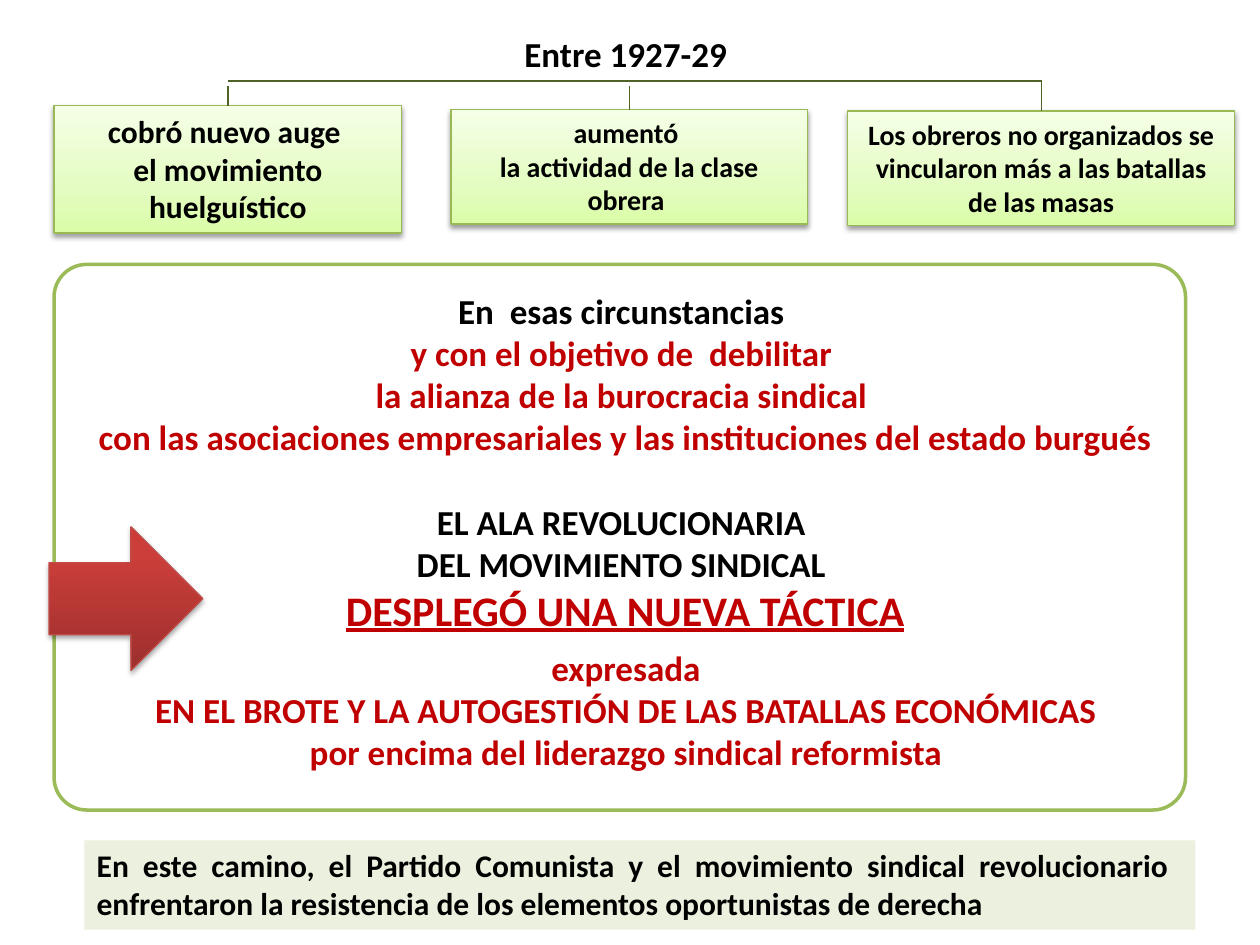
"""Builds the slide on the union movement between 1927 and 1929."""
from lxml.etree import SubElement
from pptx import Presentation
from pptx.dml.color import RGBColor
from pptx.enum.shapes import MSO_CONNECTOR, MSO_SHAPE
from pptx.enum.text import MSO_ANCHOR, MSO_AUTO_SIZE, PP_ALIGN
from pptx.oxml.ns import qn
from pptx.util import Cm, Pt

BLACK = RGBColor(0x00, 0x00, 0x00)
WHITE = RGBColor(0xFF, 0xFF, 0xFF)
RED = RGBColor(0xC0, 0x00, 0x00)
DARK_GREEN = RGBColor(0x4F, 0x62, 0x28)
PANEL_GREEN = RGBColor(0x9B, 0xBB, 0x59)
BOX_GREEN = RGBColor(0x98, 0xB9, 0x55)
PALE_GREEN = RGBColor(0xEB, 0xF1, 0xDE)
ARROW_RED = RGBColor(0xBF, 0x4C, 0x48)
GREEN_STOPS = [(0, RGBColor(0xDA, 0xFD, 0xA7)), (35, RGBColor(0xE4, 0xFC, 0xC2)),
               (100, RGBColor(0xF5, 0xFF, 0xE7))]
RED_STOPS = [(0, RGBColor(0x9C, 0x2F, 0x2D)), (80, RGBColor(0xCB, 0x3E, 0x3A)),
             (100, RGBColor(0xCE, 0x3B, 0x37))]

FACTS = [
    ((1.09, 2.13, 7.01, 2.57), 18, 1.73, ["cobró nuevo auge ", "el movimiento huelguístico"]),
    ((9.09, 2.21, 7.19, 2.31), 16, 1.73, ["aumentó ", "la actividad de la clase obrera "]),
    ((17.09, 2.24, 7.8, 2.31), 16, 1.63,
     ["Los obreros no organizados se vincularon más a las batallas de las masas"]),
]
CIRCUMSTANCES = ["En  esas circunstancias "]
PURPOSE = [
    "y con el objetivo de  debilitar ",
    "la alianza de la burocracia sindical ",
    "con las asociaciones empresariales y las instituciones del estado burgués",
]
WING = ["EL ALA REVOLUCIONARIA ", "DEL MOVIMIENTO SINDICAL "]
TACTIC = ["DESPLEGÓ UNA NUEVA TÁCTICA"]
EXPRESSION = [
    "expresada ",
    "EN EL BROTE Y LA AUTOGESTIÓN DE LAS BATALLAS ECONÓMICAS ",
    "por encima del liderazgo sindical reformista ",
]
CLOSING = ["En este camino, el Partido Comunista y el movimiento sindical revolucionario  "
           "enfrentaron la resistencia de los elementos oportunistas de derecha "]


def add_lines(owner, lines, size, color=BLACK, align=PP_ALIGN.CENTER, gap=0, underline=None):
    """Append bold paragraphs, with a gap in points before the first."""
    frame = owner.text_frame
    frame_format = {"word_wrap": True, "vertical_anchor": MSO_ANCHOR.TOP,
                    "auto_size": MSO_AUTO_SIZE.SHAPE_TO_FIT_TEXT}
    for name, value in frame_format.items():
        setattr(frame, name, value)
    font_format = {"name": "Calibri", "size": Pt(size), "bold": True, "underline": underline}
    for index, line in enumerate(lines):
        paragraph = frame.add_paragraph() if frame.text else frame.paragraphs[0]
        paragraph.alignment = align
        if gap and index == 0:
            paragraph.space_before = Pt(gap)
        run = paragraph.add_run()
        run.text = line
        for name, value in font_format.items():
            setattr(run.font, name, value)
        run.font.color.rgb = color


def add_text(slide, place):
    """Add an empty text box at a place in centimetres."""
    return slide.shapes.add_textbox(*map(Cm, place))


def add_panel(slide, kind, place, fill, line=None, width=0.75):
    """Add a shape with a plain fill, without shadow."""
    panel = slide.shapes.add_shape(kind, *map(Cm, place))
    panel.shadow.inherit = False
    panel.fill.solid()
    panel.fill.fore_color.rgb = fill
    if line is None:
        panel.line.fill.background()
    else:
        panel.line.color.rgb = line
        panel.line.width = Pt(width)
    return panel


def add_glossy(slide, kind, place, stops, line, opacity):
    """Add a shape with an upward gradient and a soft shadow below."""
    glossy = add_panel(slide, kind, place, WHITE, line)
    glossy.fill.gradient()
    glossy.fill.gradient_angle = 90
    properties = glossy.element.spPr
    stop_list = properties.find(qn("a:gradFill")).find(qn("a:gsLst"))
    for old_stop in list(stop_list):
        stop_list.remove(old_stop)
    for position, color in stops:
        stop = SubElement(stop_list, qn("a:gs"), pos=str(position * 1000))
        SubElement(stop, qn("a:srgbClr"), val=str(color))
    shadow = SubElement(properties.find(qn("a:effectLst")), qn("a:outerShdw"),
                        blurRad=str(Pt(3.1)), dist=str(Pt(1.7)), dir="5400000", rotWithShape="0")
    shade = SubElement(shadow, qn("a:srgbClr"), val=str(BLACK))
    SubElement(shade, qn("a:alpha"), val=str(opacity * 1000))
    return glossy


def add_line(slide, start_x, start_y, end_x, end_y):
    """Add a thin dark green straight connector."""
    line = slide.shapes.add_connector(MSO_CONNECTOR.STRAIGHT, start_x, start_y, end_x, end_y)
    line.line.color.rgb = DARK_GREEN
    line.line.width = Pt(0.75)
    SubElement(line.element.spPr, qn("a:effectLst"))
    return line


def add_fact(slide, place, size, drop_top, lines):
    """Add a green box and the line that drops to its top."""
    box = add_glossy(slide, MSO_SHAPE.RECTANGLE, place, GREEN_STOPS, BOX_GREEN, 38)
    add_lines(box, lines, size)
    middle = box.left + box.width // 2
    drop = add_line(slide, middle, Cm(drop_top), middle, box.top)
    drop.end_connect(box, 0)


def main():
    """Build and save the slide."""
    deck = Presentation()
    deck.slide_width, deck.slide_height = Cm(25.4), Cm(19.05)
    slide = deck.slides.add_slide(deck.slide_layouts[6])

    add_line(slide, Cm(4.6), Cm(1.63), Cm(21), Cm(1.63))
    panel = add_panel(slide, MSO_SHAPE.ROUNDED_RECTANGLE, (1.09, 5.33, 22.81, 11),
                      WHITE, PANEL_GREEN, 2)
    panel.adjustments[0] = 0.06
    add_lines(add_text(slide, (1.9, 0.53, 21.59, 1.12)), ["Entre 1927-29 "], 20)

    strategy = add_text(slide, (1.3, 5.72, 22.61, 7.26))
    add_lines(strategy, CIRCUMSTANCES, 20)
    add_lines(strategy, PURPOSE, 20, RED)
    add_lines(strategy, WING, 20, gap=24)
    add_lines(strategy, TACTIC, 24, RED, underline=True)

    for fact in FACTS:
        add_fact(slide, *fact)
    add_lines(add_text(slide, (1.5, 12.9, 22.4, 2.82)), EXPRESSION, 20, RED)
    closing = add_panel(slide, MSO_SHAPE.RECTANGLE, (1.7, 16.94, 22.4, 1.8), PALE_GREEN)
    add_lines(closing, CLOSING, 18, align=PP_ALIGN.JUSTIFY)
    add_glossy(slide, MSO_SHAPE.RIGHT_ARROW, (0.99, 10.62, 3.1, 2.9), RED_STOPS, ARROW_RED, 35)

    deck.save("out.pptx")


if __name__ == "__main__":
    main()
